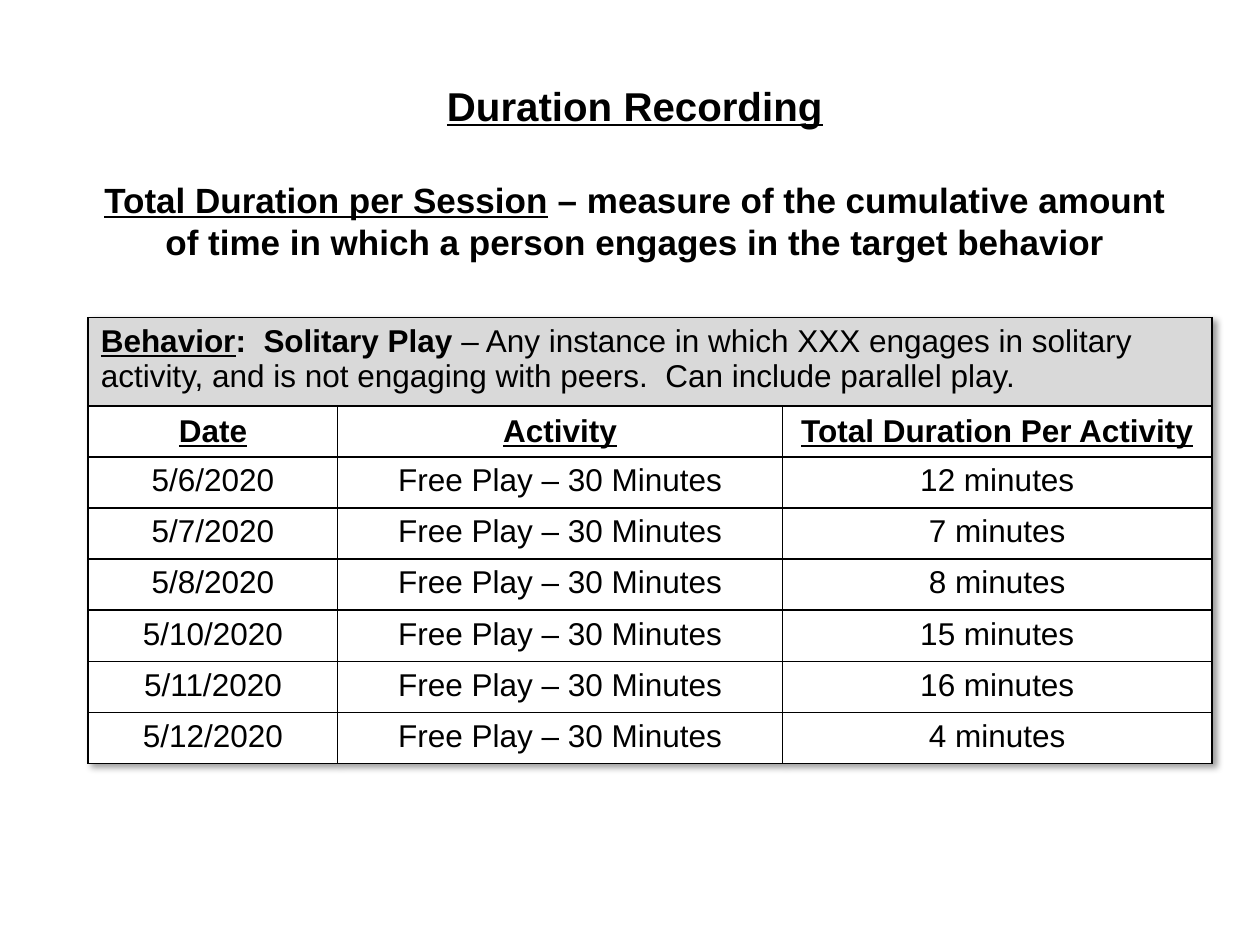
import lxml.etree
import pptx
import pptx.dml.color
import pptx.enum.text
import pptx.oxml.ns
import pptx.util

COLORS = {"ink": "000000", "banner": "D9D9D9", "paper": "FFFFFF"}
WIDTH, HEIGHT = 10, 7.5
COLUMN_WIDTHS = [1.98, 3.53, 3.41]
TABLE_HEIGHT, BANNER_HEIGHT = 3.5, 0.66

HEADINGS = ["Date", "Activity", "Total Duration Per Activity"]
ACTIVITY = "Free Play – 30 Minutes"
SESSIONS = [
    ("5/6/2020", 12),
    ("5/7/2020", 7),
    ("5/8/2020", 8),
    ("5/10/2020", 15),
    ("5/11/2020", 16),
    ("5/12/2020", 4),
]


def inches(value):
    return pptx.util.Inches(value)


def rgb(name):
    return pptx.dml.color.RGBColor.from_string(COLORS[name])


def add_span(para, text, size=18, bold=False, underline=False):
    span = para.add_run()
    span.text = text
    span.font.name = "Arial"
    span.font.size = pptx.util.Pt(size)
    span.font.bold = bold
    span.font.underline = underline
    span.font.color.rgb = rgb("ink")


def center(para):
    para.alignment = pptx.enum.text.PP_ALIGN.CENTER


def add_element(parent, tag, **attributes):
    return lxml.etree.SubElement(parent, pptx.oxml.ns.qn(tag), attributes)


def style_cell(cell, fill):
    """Draw a 1 pt border on all four sides and fill the cell."""
    properties = cell._tc.get_or_add_tcPr()
    for side in ("a:lnL", "a:lnR", "a:lnT", "a:lnB"):
        line = add_element(properties, side, w=str(pptx.util.Pt(1)))
        solid = add_element(line, "a:solidFill")
        add_element(solid, "a:srgbClr", val=COLORS["ink"])
    cell.fill.solid()
    cell.fill.fore_color.rgb = rgb(fill)


def add_table_shadow(table):
    effects = add_element(table._tbl.tblPr, "a:effectLst")
    table._tbl.tblPr.insert(0, effects)
    shadow = add_element(effects, "a:outerShdw", blurRad="50800", dist="38100",
                         dir="2700000", algn="tl", rotWithShape="0")
    color = add_element(shadow, "a:srgbClr", val=COLORS["ink"])
    add_element(color, "a:alpha", val="40000")


def add_title(page):
    box = page.shapes.add_textbox(inches(0.58), inches(0.58), inches(8.92), inches(1.55))
    frame = box.text_frame
    frame.word_wrap = True
    frame.vertical_anchor = pptx.enum.text.MSO_ANCHOR.BOTTOM
    heading, definition = frame.paragraphs[0], frame.add_paragraph()
    center(heading)
    add_span(heading, "Duration Recording", size=23, bold=True, underline=True)
    center(definition)
    definition.space_before = pptx.util.Pt(28)
    definition.line_spacing = pptx.util.Pt(24)
    add_span(definition, "Total Duration per Session", size=20, bold=True, underline=True)
    add_span(definition, " – measure of the cumulative amount of time in which "
             "a person engages in the target behavior", size=20, bold=True)


def fill_banner(table):
    banner = table.cell(0, 0)
    banner.merge(table.cell(0, len(HEADINGS) - 1))
    para = banner.text_frame.paragraphs[0]
    add_span(para, "Behavior", bold=True, underline=True)
    add_span(para, ":  Solitary Play ", bold=True)
    add_span(para, "– Any instance in which XXX engages in solitary activity, and is "
             "not engaging with peers.  Can include parallel play.")


def add_duration_table(page):
    records = [HEADINGS] + [(date, ACTIVITY, f"{minutes} minutes") for date, minutes in SESSIONS]
    table = page.shapes.add_table(
        len(records) + 1, len(HEADINGS), inches(0.7), inches(2.52),
        inches(sum(COLUMN_WIDTHS)), inches(TABLE_HEIGHT)).table
    table.first_row = table.horz_banding = False
    add_table_shadow(table)
    for column, width in zip(table.columns, COLUMN_WIDTHS):
        column.width = inches(width)
    for index, row in enumerate(table.rows):
        shared = (TABLE_HEIGHT - BANNER_HEIGHT) / len(records)
        row.height = inches(shared if index else BANNER_HEIGHT)
        for cell in row.cells:
            style_cell(cell, "paper" if index else "banner")
    fill_banner(table)
    for row_index, record in enumerate(records, start=1):
        is_heading = row_index == 1
        for column_index, text in enumerate(record):
            cell = table.cell(row_index, column_index)
            if is_heading:
                cell.vertical_anchor = pptx.enum.text.MSO_ANCHOR.MIDDLE
            para = cell.text_frame.paragraphs[0]
            center(para)
            add_span(para, text, bold=is_heading, underline=is_heading)


def main():
    deck = pptx.Presentation()
    deck.slide_width, deck.slide_height = inches(WIDTH), inches(HEIGHT)
    page = deck.slides.add_slide(deck.slide_layouts[6])
    add_title(page)
    add_duration_table(page)
    deck.save("out.pptx")


if __name__ == "__main__":
    main()
